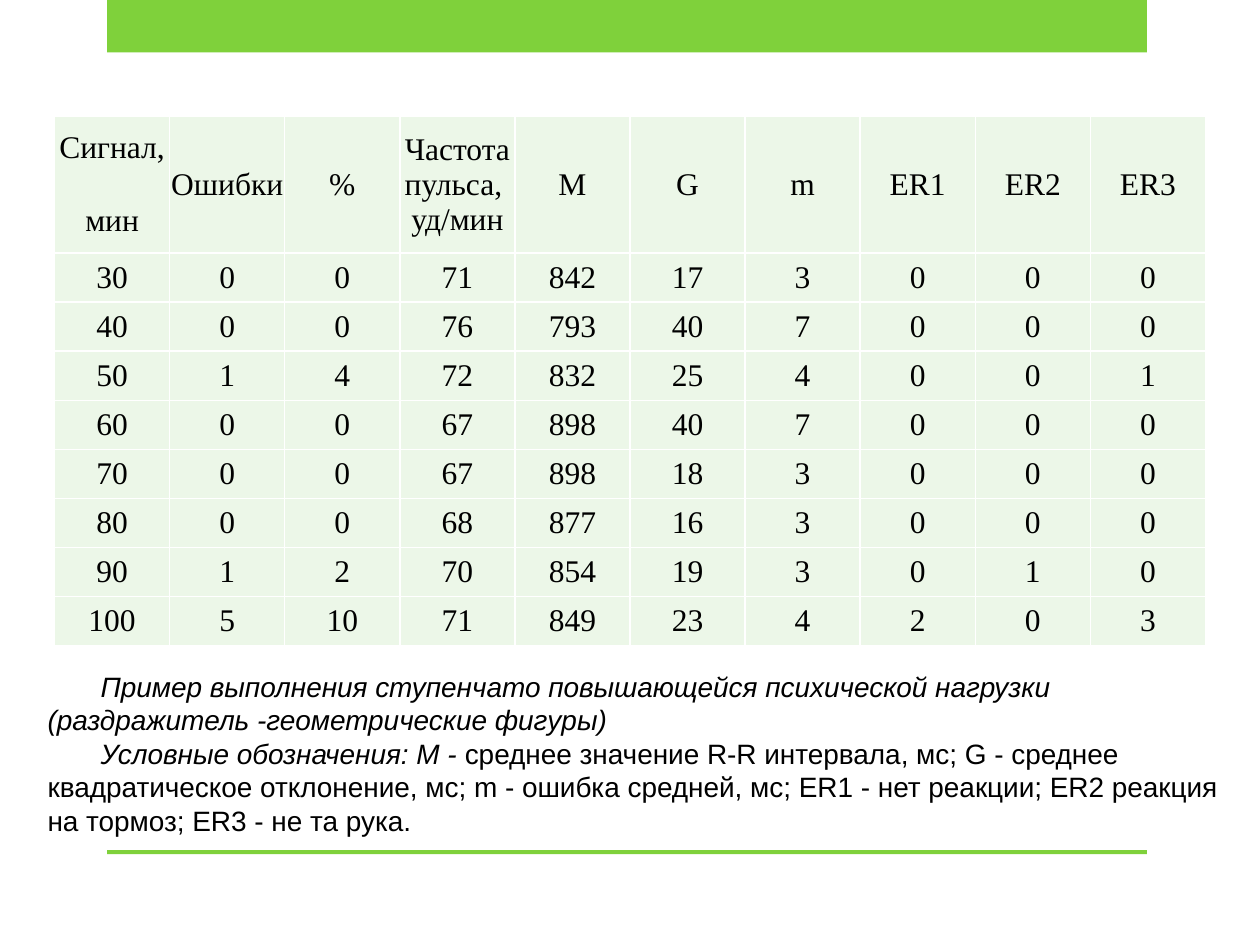
import pptx
import pptx.util
import pptx.dml.color
import pptx.enum.shapes
import pptx.enum.text
import pptx.oxml

Cm = pptx.util.Cm
Pt = pptx.util.Pt
align = pptx.enum.text.PP_ALIGN
mid = pptx.enum.text.MSO_ANCHOR.MIDDLE


def tint(code):
    return pptx.dml.color.RGBColor.from_string(code)


def style(item, form):
    for key, value in form.items():
        setattr(item, key, value)


deck = pptx.Presentation()
style(deck, {"slide_width": Cm(25.4), "slide_height": Cm(19.05)})
slide = deck.slides.add_slide(deck.slide_layouts[6])

for top, high in [(0, 1.06), (17.14, 0.08)]:
    bar = slide.shapes.add_shape(
        pptx.enum.shapes.MSO_SHAPE.RECTANGLE, Cm(2.16), Cm(top), Cm(20.96), Cm(high))
    bar.shadow.inherit = False
    bar.fill.solid()
    bar.fill.fore_color.rgb = tint("7FD13B")
    bar.line.fill.background()

rows = [
    ["Сигнал, \vмин", "Ошибки", "%", "Частота пульса, \vуд/мин",
     "М", "G", "m", "ER1", "ER2", "ER3"],
    [30, 0, 0, 71, 842, 17, 3, 0, 0, 0],
    [40, 0, 0, 76, 793, 40, 7, 0, 0, 0],
    [50, 1, 4, 72, 832, 25, 4, 0, 0, 1],
    [60, 0, 0, 67, 898, 40, 7, 0, 0, 0],
    [70, 0, 0, 67, 898, 18, 3, 0, 0, 0],
    [80, 0, 0, 68, 877, 16, 3, 0, 0, 0],
    [90, 1, 2, 70, 854, 19, 3, 0, 1, 0],
    [100, 5, 10, 71, 849, 23, 4, 2, 0, 3],
]
table = slide.shapes.add_table(
    len(rows), len(rows[0]), Cm(1.1), Cm(2.34), Cm(23.2), Cm(10.68)).table
style(table, {"first_row": False, "horz_banding": False})
for col in table.columns:
    col.width = Cm(2.32)
for row in table.rows:
    row.height = Cm(0.99)
table.rows[0].height = Cm(2.76)

sides = ("margin_left", "margin_right", "margin_top", "margin_bottom")
box = {"vertical_anchor": mid, **dict.fromkeys(sides, Cm(0.03))}
font = {"size": Pt(18), "name": "Times New Roman"}
edge = ('<a:{} xmlns:a="http://schemas.openxmlformats.org/drawingml/2006/main" w="12700">'
        '<a:solidFill><a:srgbClr val="FFFFFF"/></a:solidFill></a:{}>')
for r, row in enumerate(rows):
    for c, value in enumerate(row):
        cell = table.cell(r, c)
        cell.text = str(value)
        style(cell, box)
        para = cell.text_frame.paragraphs[0]
        para.alignment = align.CENTER
        for run in para.runs:
            style(run.font, font)
            run.font.color.rgb = tint("000000")
        prop = cell._tc.get_or_add_tcPr()
        for tag in ("lnL", "lnR", "lnT", "lnB"):
            prop.append(pptx.oxml.parse_xml(edge.format(tag, tag)))
        cell.fill.solid()
        cell.fill.fore_color.rgb = tint("ECF7E8")

note = slide.shapes.add_textbox(Cm(0.71), Cm(13.34), Cm(24.54), Cm(3.68)).text_frame
style(note, {"word_wrap": True, "vertical_anchor": mid,
             "auto_size": pptx.enum.text.MSO_AUTO_SIZE.SHAPE_TO_FIT_TEXT})
paras = [
    [("Пример выполнения ступенчато повышающейся психической нагрузки "
      "(раздражитель -геометрические фигуры)", True)],
    [("Условные обозначения: M -", True),
     (" среднее значение R-R интервала, мс; G - среднее квадратическое отклонение, мс; "
      "m - ошибка средней, мс; ER1 - нет реакции; ER2 реакция на тормоз; "
      "ER3 - не та рука.", False)],
]
for n, parts in enumerate(paras):
    para = note.add_paragraph() if n else note.paragraphs[0]
    para.alignment = align.LEFT
    prop = para._p.get_or_add_pPr()
    prop.set("marL", "0")
    prop.set("indent", str(Cm(1.07)))
    for text, slant in parts:
        run = para.add_run()
        run.text = text
        style(run.font, {"size": Pt(16), "name": "Arial", "italic": slant})
        run.font.color.rgb = tint("000000")

deck.save("out.pptx")
